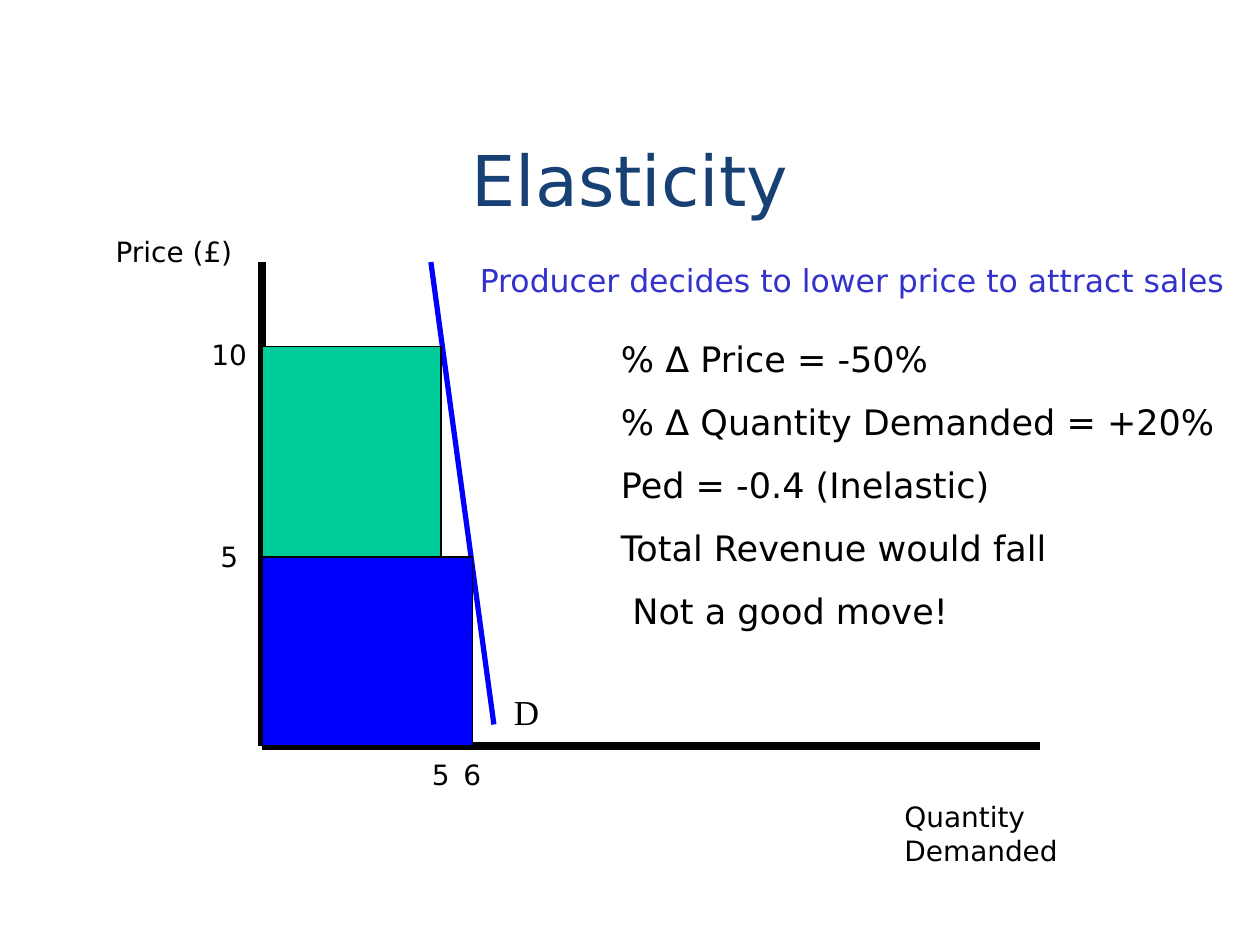
from dataclasses import dataclass

from lxml.etree import SubElement
from pptx import Presentation
from pptx.dml.color import RGBColor
from pptx.enum.shapes import MSO_CONNECTOR, MSO_SHAPE
from pptx.enum.text import MSO_ANCHOR, MSO_AUTO_SIZE, PP_ALIGN
from pptx.oxml.ns import qn
from pptx.slide import Slide
from pptx.util import Inches, Pt

COLOURS = {
    "title": "174174",
    "ink": "000000",
    "note": "3333CC",
    "demand": "0000FF",
    "old_revenue": "00CC99",
    "new_revenue": "0000FF",
}
SANS = "DejaVu Sans"
SERIF = "Times New Roman"
ORIGIN_X, ORIGIN_Y = 2.08, 5.92
AXIS_TOP, AXIS_RIGHT = 2.08, 8.25
FINDING_TOP, FINDING_STEP = 2.63, 0.5


@dataclass
class Line:
    start: tuple[float, float]
    end: tuple[float, float]
    colour: str
    weight: float


@dataclass
class Revenue:
    top: float
    width: float
    colour: str


@dataclass
class Label:
    text: str
    left: float
    top: float
    width: float


AXES = [
    Line((ORIGIN_X, AXIS_TOP), (ORIGIN_X, ORIGIN_Y), "ink", 4.5),
    Line((ORIGIN_X, ORIGIN_Y), (AXIS_RIGHT, ORIGIN_Y), "ink", 4.5),
]
DEMAND = Line((3.42, AXIS_TOP), (3.92, 5.75), "demand", 3)
REVENUES = [Revenue(2.75, 1.42, "old_revenue"), Revenue(4.42, 1.67, "new_revenue")]
AXIS_LABELS = [
    Label("Price (£)", 0.82, 1.81, 1.16),
    Label("10", 1.58, 2.63, 0.48),
    Label("5", 1.65, 4.23, 0.34),
    Label("5", 3.33, 5.96, 0.34),
    Label("6", 3.58, 5.96, 0.34),
]
FINDINGS = [
    ("% Δ Price = -50%", 4.83, 2.74),
    ("% Δ Quantity Demanded = +20%", 4.83, 4.97),
    ("Ped = -0.4 (Inelastic)", 4.83, 3.23),
    ("Total Revenue would fall", 4.83, 3.63),
    ("Not a good move!", 4.92, 2.71),
]


def colour_of(name: str) -> RGBColor:
    return RGBColor.from_string(COLOURS[name])


def add_text(page: Slide, label: Label, *, height: float = 0.37, size: float = 16,
             font: str = SANS, colour: str = "ink", wrap: bool = False,
             align: PP_ALIGN = PP_ALIGN.LEFT, anchor: MSO_ANCHOR = MSO_ANCHOR.TOP,
             grow: bool = True) -> None:
    box = page.shapes.add_textbox(Inches(label.left), Inches(label.top),
                                  Inches(label.width), Inches(height))
    frame = box.text_frame
    frame.word_wrap = wrap
    frame.auto_size = MSO_AUTO_SIZE.SHAPE_TO_FIT_TEXT if grow else MSO_AUTO_SIZE.NONE
    frame.vertical_anchor = anchor
    para = frame.paragraphs[0]
    para.alignment = align
    span = para.add_run()
    span.text = label.text
    span.font.name = font
    span.font.size = Pt(size)
    span.font.color.rgb = colour_of(colour)


def add_line(page: Slide, line: Line) -> None:
    connector = page.shapes.add_connector(
        MSO_CONNECTOR.STRAIGHT, *(Inches(value) for value in line.start + line.end))
    connector.line.color.rgb = colour_of(line.colour)
    connector.line.width = Pt(line.weight)
    SubElement(connector._element.spPr, qn("a:effectLst"))


def add_revenue(page: Slide, revenue: Revenue) -> None:
    area = page.shapes.add_shape(
        MSO_SHAPE.RECTANGLE, Inches(ORIGIN_X), Inches(revenue.top),
        Inches(revenue.width), Inches(ORIGIN_Y - revenue.top))
    area.shadow.inherit = False
    area.fill.solid()
    area.fill.fore_color.rgb = colour_of(revenue.colour)
    area.line.color.rgb = colour_of("ink")
    area.line.width = Pt(0.75)


def main() -> None:
    """Build the price elasticity slide."""
    deck = Presentation()
    deck.slide_width, deck.slide_height = Inches(10), Inches(7.5)
    page = deck.slides.add_slide(deck.slide_layouts[6])

    add_text(page, Label("Elasticity", 0.75, 1, 8.5), height=0.83, size=40,
             colour="title", wrap=True, align=PP_ALIGN.CENTER,
             anchor=MSO_ANCHOR.MIDDLE, grow=False)
    for line in [*AXES, DEMAND]:
        add_line(page, line)
    for revenue in REVENUES:
        add_revenue(page, revenue)
    for label in AXIS_LABELS:
        add_text(page, label)
    add_text(page, Label("Quantity Demanded", 7.08, 6.3, 1.5), height=0.64, wrap=True)
    add_text(page, Label("D", 3.98, 5.43, 0.4), height=0.43, size=20, font=SERIF)
    add_text(page, Label("Producer decides to lower price to attract sales", 3.71, 2.02, 6.12),
             height=0.4, size=18, colour="note")
    for row, (text, left, width) in enumerate(FINDINGS):
        top = FINDING_TOP + row * FINDING_STEP
        add_text(page, Label(text, left, top, width), height=0.43, size=20)

    deck.save("out.pptx")


if __name__ == "__main__":
    main()
